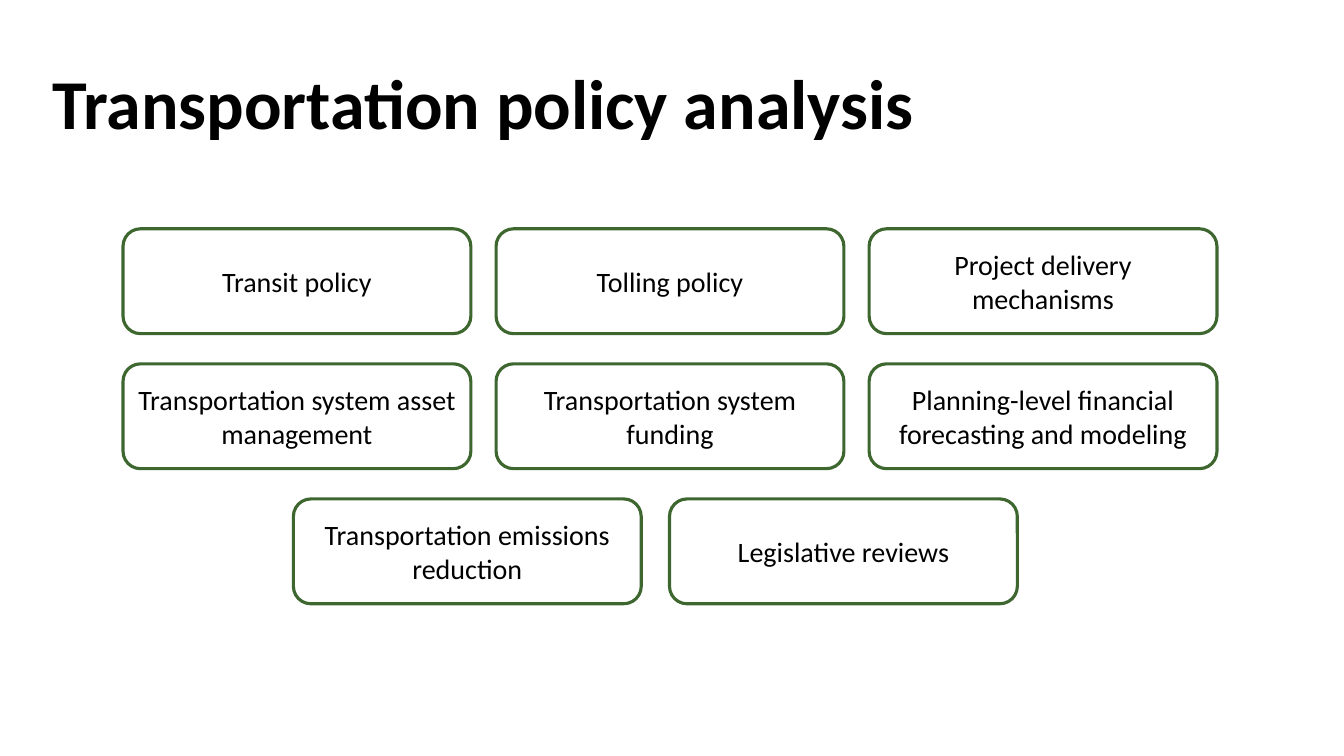
from dataclasses import dataclass

from pptx import Presentation
from pptx import util as u
from pptx.dml.color import RGBColor
from pptx.enum import shapes, text


@dataclass(frozen=True)
class Theme:
    font: str = "Calibri"
    ink: RGBColor = RGBColor(0x00, 0x00, 0x00)
    paper: RGBColor = RGBColor(0xFF, 0xFF, 0xFF)
    border: RGBColor = RGBColor(0x3E, 0x67, 0x30)
    border_width: u.Pt = u.Pt(2.25)
    title_size: u.Pt = u.Pt(50)
    topic_size: u.Pt = u.Pt(20)


THEME = Theme()
SLIDE_SIZE = u.Inches(13.33), u.Inches(7.5)
TOPIC_WIDTH, TOPIC_HEIGHT = 3.45, 1.04
FIRST_ROW, ROW_STEP = 2.27, 1.34
TOPIC_ROWS = [
    (1.22, 3.7, ["Transit policy", "Tolling policy", "Project delivery mechanisms"]),
    (1.22, 3.7, ["Transportation system asset management",
                 "Transportation system funding",
                 "Planning-level financial forecasting and modeling"]),
    (2.91, 3.73, ["Transportation emissions reduction", "Legislative reviews"]),
]


def write(frame, wording, size, bold=False, **layout):
    frame.word_wrap = True
    paragraph = frame.paragraphs[0]
    for name, value in layout.items():
        setattr(paragraph, name, value)
    run = paragraph.add_run()
    run.text = wording
    looks = {"name": THEME.font, "size": size, "bold": bold}
    for name, value in looks.items():
        setattr(run.font, name, value)
    run.font.color.rgb = THEME.ink


def add_title(slide, wording):
    box = map(u.Inches, (0.42, 0.64, 9.21, 1.46))
    title = slide.shapes.add_textbox(*box)
    write(title.text_frame, wording, THEME.title_size, bold=True, line_spacing=0.9)


def add_topic(slide, left, top, wording):
    box = map(u.Inches, (left, top, TOPIC_WIDTH, TOPIC_HEIGHT))
    topic = slide.shapes.add_shape(shapes.MSO_SHAPE.ROUNDED_RECTANGLE, *box)
    topic.shadow.inherit = False
    topic.fill.solid()
    topic.fill.fore_color.rgb = THEME.paper
    topic.line.color.rgb = THEME.border
    topic.line.width = THEME.border_width
    topic.text_frame.vertical_anchor = text.MSO_ANCHOR.MIDDLE
    write(topic.text_frame, wording, THEME.topic_size, alignment=text.PP_ALIGN.CENTER)


def main():
    deck = Presentation()
    deck.slide_width, deck.slide_height = SLIDE_SIZE
    slide = deck.slides.add_slide(deck.slide_layouts[6])
    add_title(slide, "Transportation policy analysis")
    for row, (start, column_step, topics) in enumerate(TOPIC_ROWS):
        for column, wording in enumerate(topics):
            add_topic(slide, start + column * column_step,
                      FIRST_ROW + row * ROW_STEP, wording)
    deck.save("out.pptx")


if __name__ == "__main__":
    main()
